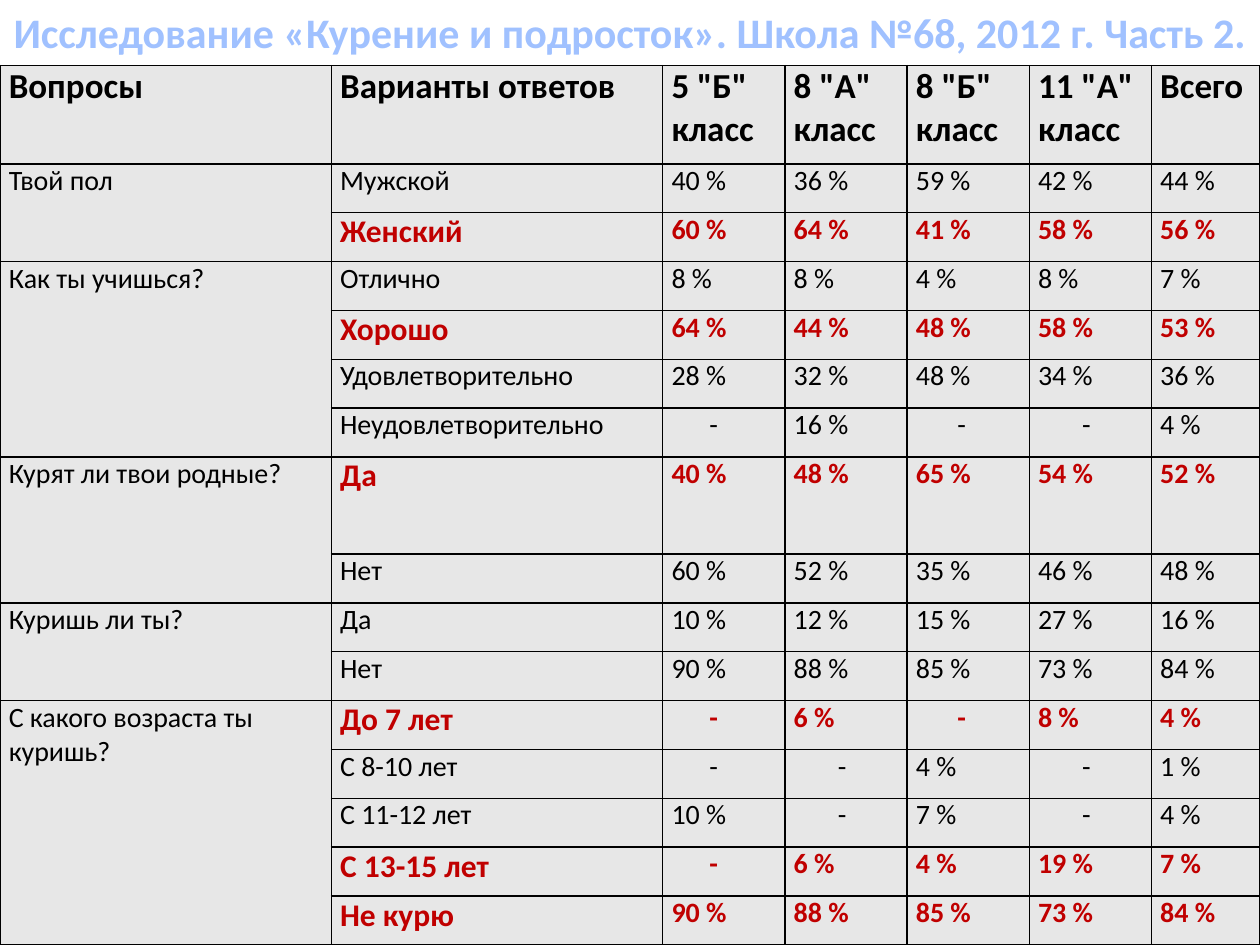
from lxml import etree
from pptx import Presentation
from pptx.dml.color import RGBColor
from pptx.enum.text import MSO_ANCHOR, PP_ALIGN
from pptx.oxml.ns import qn
from pptx.util import Inches, Pt

CENTER = PP_ALIGN.CENTER
MIDDLE = MSO_ANCHOR.MIDDLE
TOP = MSO_ANCHOR.TOP

FONT = "Calibri"
BLACK, RED, GREY, TITLE_BLUE = "000000", "C00000", "E7E7E7", "A0C1FF"

TITLE = "Исследование «Курение и подросток». Школа №68, 2012 г. Часть 2."
HEADINGS = ["Вопросы", "Варианты ответов", '5 "Б" класс', '8 "А" класс',
            '8 "Б" класс', '11 "А" класс', "Всего"]
SURVEY = [
    ("Твой пол", [
        ("Мужской", [40, 36, 59, 42, 44]),
        ("Женский", [60, 64, 41, 58, 56]),
    ]),
    ("Как ты учишься?", [
        ("Отлично", [8, 8, 4, 8, 7]),
        ("Хорошо", [64, 44, 48, 58, 53]),
        ("Удовлетворительно", [28, 32, 48, 34, 36]),
        ("Неудовлетворительно", [None, 16, None, None, 4]),
    ]),
    ("Курят ли твои родные?", [
        ("Да", [40, 48, 65, 54, 52]),
        ("Нет", [60, 52, 35, 46, 48]),
    ]),
    ("Куришь ли ты?", [
        ("Да", [10, 12, 15, 27, 16]),
        ("Нет", [90, 88, 85, 73, 84]),
    ]),
    ("С какого возраста ты куришь?", [
        ("До 7 лет", [None, 6, None, 8, 4]),
        ("С 8-10 лет", [None, None, 4, None, 1]),
        ("С 11-12 лет", [10, None, 7, None, 4]),
        ("С 13-15 лет", [None, 6, 4, 19, 7]),
        ("Не курю", [90, 88, 85, 73, 84]),
    ]),
]
HIGHLIGHTED_ROWS = {2, 4, 7, 11, 14, 15}
TALL_ROWS = {0: 0.78, 7: 0.77}
DASH_INDENTS = [0.3, 0.35, 0.33, 0.35, 0.3]

SLIDE_WIDTH, SLIDE_HEIGHT = 10, 7.5
TABLE_TOP = 0.52
TABLE_HEIGHT = SLIDE_HEIGHT - TABLE_TOP
COLUMN_WIDTHS = [2.63, 2.63] + [0.97] * 4
COLUMN_WIDTHS.append(SLIDE_WIDTH - sum(COLUMN_WIDTHS))
ROW_COUNT = 1 + sum(len(answers) for _, answers in SURVEY)
ROW_HEIGHT = (TABLE_HEIGHT - sum(TALL_ROWS.values())) / (ROW_COUNT - len(TALL_ROWS))


def rgb(value):
    return RGBColor.from_string(value)


def add_text(paragraph, text, size, color, bold):
    run = paragraph.add_run()
    run.text = text
    run.font.name = FONT
    run.font.size = Pt(size)
    run.font.bold = bold
    run.font.color.rgb = rgb(color)


def style_cell(cell):
    cell.margin_left = cell.margin_right = Inches(0.07)
    cell.margin_top = cell.margin_bottom = 0
    cell.vertical_anchor = TOP
    properties = cell._tc.get_or_add_tcPr()
    for side in ("a:lnL", "a:lnR", "a:lnT", "a:lnB"):
        border = etree.SubElement(properties, qn(side), w=str(Pt(1)))
        paint = etree.SubElement(border, qn("a:solidFill"))
        etree.SubElement(paint, qn("a:srgbClr"), val=BLACK)
    cell.fill.solid()
    cell.fill.fore_color.rgb = rgb(GREY)


def fill_answer(table, row, answer, shares):
    marked = row in HIGHLIGHTED_ROWS
    color = RED if marked else BLACK
    add_text(table.cell(row, 1).text_frame.paragraphs[0], answer,
             18 if marked else 16, color, marked)
    for column, (share, indent) in enumerate(zip(shares, DASH_INDENTS), 2):
        paragraph = table.cell(row, column).text_frame.paragraphs[0]
        if share is None:
            paragraph._p.get_or_add_pPr().set("marL", str(Inches(indent)))
        add_text(paragraph, "-" if share is None else f"{share} %", 16, color, marked)


def add_survey(slide):
    table = slide.shapes.add_table(
        ROW_COUNT, len(HEADINGS), 0, Inches(TABLE_TOP),
        Inches(SLIDE_WIDTH), Inches(TABLE_HEIGHT)).table
    table.horz_banding = False
    for column, width in zip(table.columns, COLUMN_WIDTHS):
        column.width = Inches(width)
    for index, row in enumerate(table.rows):
        row.height = Inches(TALL_ROWS.get(index, ROW_HEIGHT))
    for cell in table.iter_cells():
        style_cell(cell)
    for column, heading in enumerate(HEADINGS):
        add_text(table.cell(0, column).text_frame.paragraphs[0], heading, 20, BLACK, True)
    row = 1
    for question, answers in SURVEY:
        question_cell = table.cell(row, 0)
        question_cell.merge(table.cell(row + len(answers) - 1, 0))
        add_text(question_cell.text_frame.paragraphs[0], question, 16, BLACK, False)
        for answer, shares in answers:
            fill_answer(table, row, answer, shares)
            row += 1


def add_title(slide):
    frame = slide.shapes.add_textbox(0, 0, Inches(SLIDE_WIDTH), Inches(0.5)).text_frame
    frame.word_wrap = True
    frame.margin_left = frame.margin_right = Inches(0.05)
    frame.vertical_anchor = MIDDLE
    frame.paragraphs[0].alignment = CENTER
    add_text(frame.paragraphs[0], TITLE, 24, TITLE_BLUE, True)


def main():
    deck = Presentation()
    deck.slide_width = Inches(SLIDE_WIDTH)
    deck.slide_height = Inches(SLIDE_HEIGHT)
    slide = deck.slides.add_slide(deck.slide_layouts[6])
    add_survey(slide)
    add_title(slide)
    deck.save("out.pptx")


if __name__ == "__main__":
    main()
